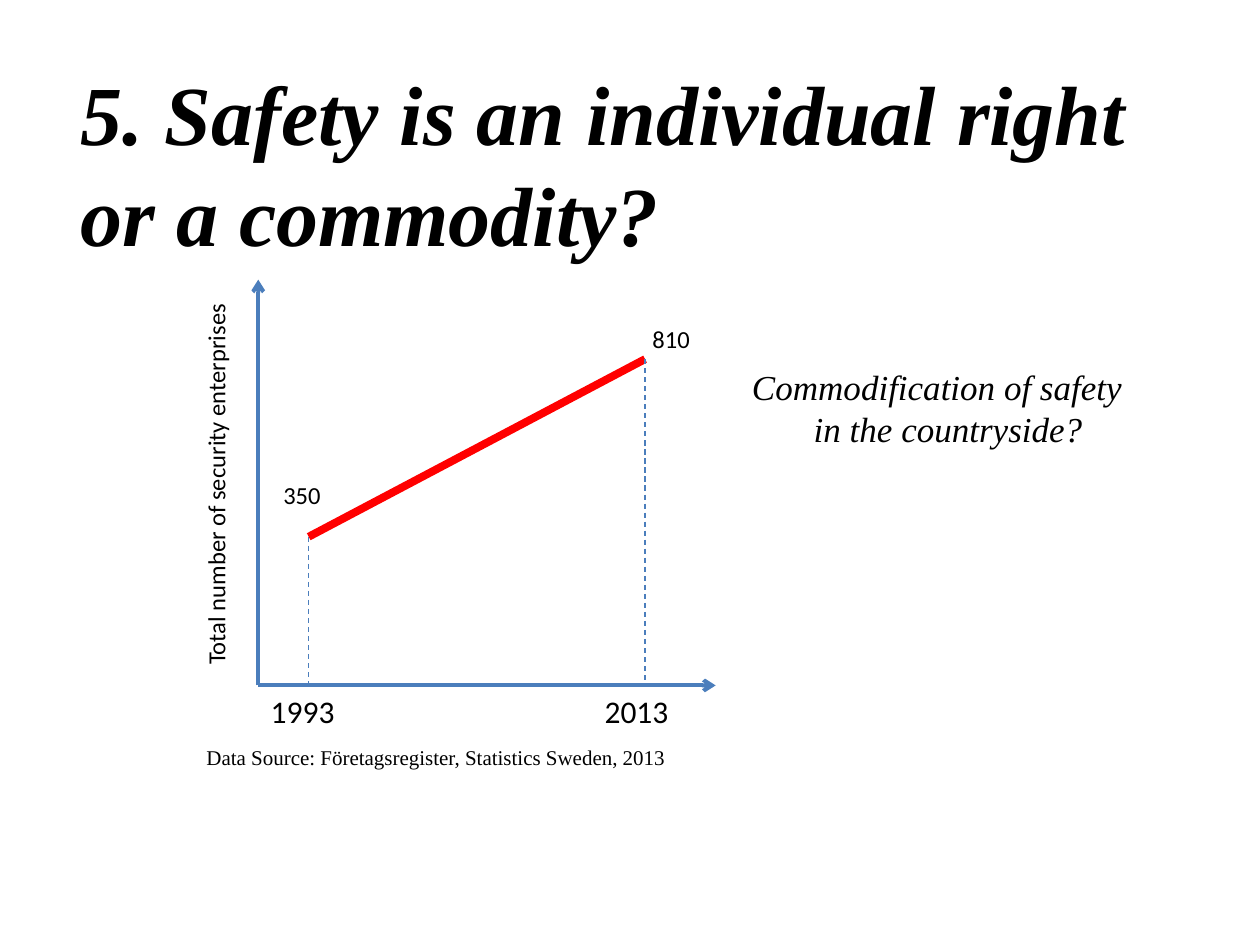
"""Builds a slide on the growth of security enterprises in Sweden."""
import pptx
import pptx.dml.color
import pptx.enum.dml
import pptx.enum.shapes
import pptx.enum.text
import pptx.oxml.ns
import pptx.util
from lxml import etree

Inches = pptx.util.Inches


def rgb(value):
    return pptx.dml.color.RGBColor.from_string(value)


prs = pptx.Presentation()
prs.slide_width, prs.slide_height = Inches(10), Inches(7.5)
s = prs.slides.add_slide(prs.slide_layouts[6])

origin_x, origin_y = 2.05, 5.44
start, end = (2.45, 4.26), (5.12, 2.85)
blue, red = "4B7EBC", "FF0000"
lines = [
    ((origin_x, origin_y), (5.68, origin_y), blue, 2.25, "arrow"),
    ((origin_x, origin_y), (origin_x, 2.22), blue, 2.25, "arrow"),
    (start, end, red, 4.5, None),
    (start, (start[0], origin_y), blue, 0.75, "dash"),
    (end, (end[0], origin_y), blue, 0.75, "dash"),
]
for begin, finish, color, width, style in lines:
    c = s.shapes.add_connector(
        pptx.enum.shapes.MSO_CONNECTOR.STRAIGHT,
        *(Inches(v) for v in begin + finish))
    c.line.color.rgb = rgb(color)
    c.line.width = pptx.util.Pt(width)
    if style == "dash":
        c.line.dash_style = pptx.enum.dml.MSO_LINE.DASH
    if style == "arrow":
        ln = c.line._get_or_add_ln()
        etree.SubElement(ln, pptx.oxml.ns.qn("a:tailEnd"), type="arrow")
    etree.SubElement(c._element.spPr, pptx.oxml.ns.qn("a:effectLst"))

sans, serif = {"name": "Calibri"}, {"name": "Times New Roman"}
title = {**serif, "bold": True, "italic": True}
texts = [
    ((0.17, 3.66, 3.09, 0.34), ["Total number of security enterprises"], 14, sans, 270),
    ((2.05, origin_y, 0.71, 0.4), ["1993"], 18, sans, 0),
    ((4.7, origin_y, 0.71, 0.4), ["2013"], 18, sans, 0),
    ((1.54, 5.86, 3.89, 0.3),
     ["Data Source: Företagsregister, Statistics Sweden, 2013"], 12, serif, 0),
    ((2.15, 3.76, 0.5, 0.34), ["350"], 14, sans, 0),
    ((5.08, 2.52, 0.5, 0.34), ["810"], 14, sans, 0),
    ((5.87, 2.85, 3.16, 0.77), ["Commodification of safety", "in the countryside?"],
     20, {**serif, "italic": True}, 0),
    ((0.54, 0.44, 8.59, 1.72), ["5. Safety is an individual right", "or a commodity?"],
     48, title, 0),
]
for box, paragraphs, size, font, rotation in texts:
    sp = s.shapes.add_textbox(*(Inches(v) for v in box))
    sp.rotation = rotation
    tf = sp.text_frame
    tf.word_wrap = False
    tf.auto_size = pptx.enum.text.MSO_AUTO_SIZE.SHAPE_TO_FIT_TEXT
    for i, text in enumerate(paragraphs):
        p = tf.add_paragraph() if i else tf.paragraphs[0]
        if text.startswith("in the"):
            p._p.get_or_add_pPr().set("marL", str(Inches(0.49)))
        r = p.add_run()
        r.text = text
        r.font.size = pptx.util.Pt(size)
        r.font.color.rgb = rgb("000000")
        for key, value in font.items():
            setattr(r.font, key, value)

prs.save("out.pptx")
